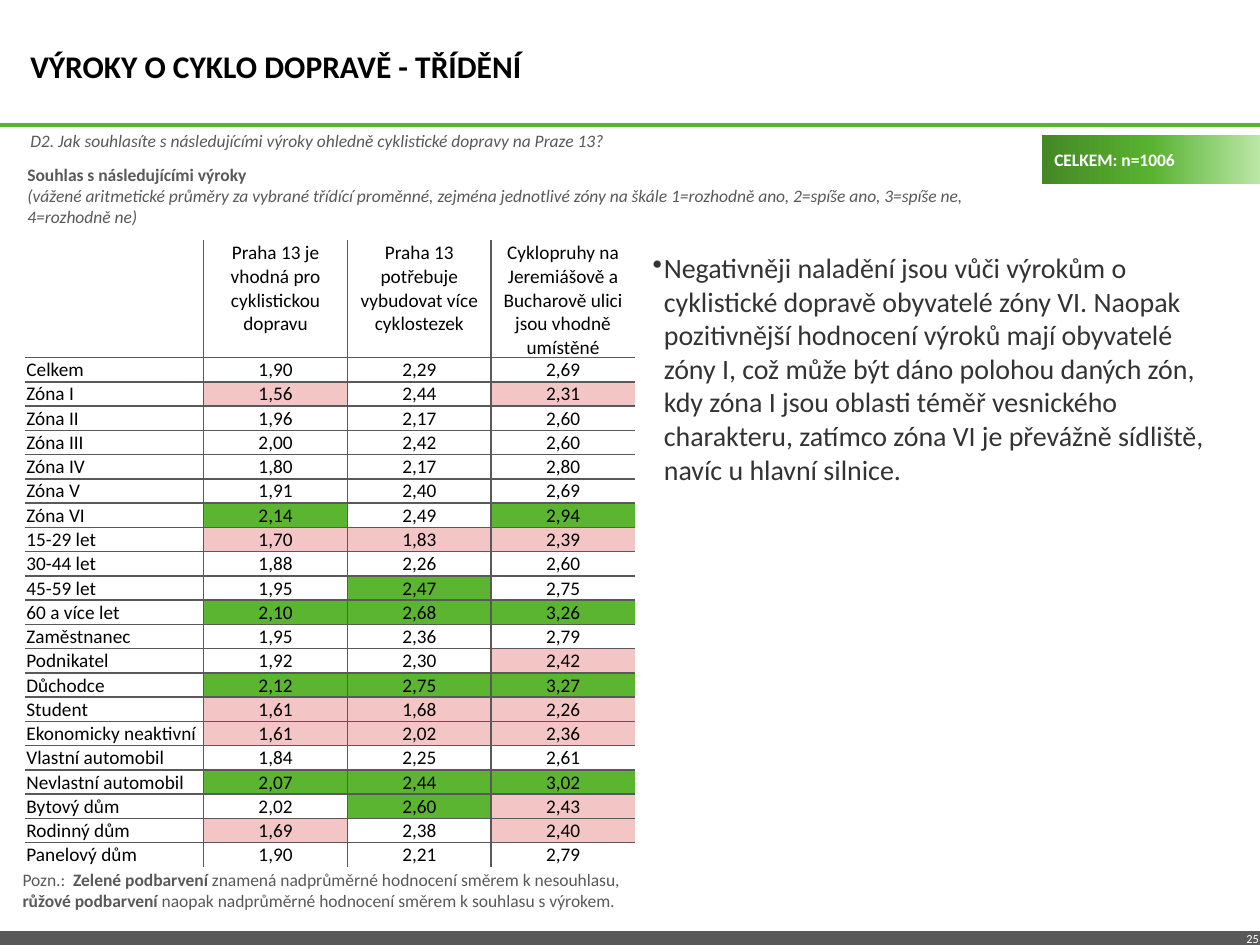
from copy import deepcopy

from lxml import etree
from pptx import Presentation
from pptx.dml.color import RGBColor
from pptx.enum.shapes import MSO_CONNECTOR, MSO_SHAPE
from pptx.enum.text import MSO_ANCHOR, PP_ALIGN
from pptx.oxml.ns import qn
from pptx.util import Pt

STRAIGHT = MSO_CONNECTOR.STRAIGHT
RECTANGLE = MSO_SHAPE.RECTANGLE
TOP, MIDDLE = MSO_ANCHOR.TOP, MSO_ANCHOR.MIDDLE
LEFT, CENTER, RIGHT = PP_ALIGN.LEFT, PP_ALIGN.CENTER, PP_ALIGN.RIGHT

FONT = "Calibri"
GREEN, PINK, GRAY = "5BB531", "F3C6C5", "595959"
BLACK, WHITE, DARK = "000000", "FFFFFF", "333333"
NO_TABLE_STYLE = "{2D5ABB26-0587-4C30-8999-92F81FD0307C}"
DEFAULT_INSETS = (7.2, 3.6, 7.2, 3.6)

STATEMENTS = [
    "Praha 13 je vhodná pro cyklistickou dopravu",
    "Praha 13 potřebuje vybudovat více cyklostezek",
    "Cyklopruhy na Jeremiášově a Bucharově ulici jsou vhodně umístěné",
]
# Group, mean scores, and one mark per score: g = green, p = pink, - = none
SCORES = [
    ("Celkem", "1,90 2,29 2,69", "---"),
    ("Zóna I", "1,56 2,44 2,31", "p-p"),
    ("Zóna II", "1,96 2,17 2,60", "---"),
    ("Zóna III", "2,00 2,42 2,60", "---"),
    ("Zóna IV", "1,80 2,17 2,80", "---"),
    ("Zóna V", "1,91 2,40 2,69", "---"),
    ("Zóna VI", "2,14 2,49 2,94", "g-g"),
    ("15-29 let", "1,70 1,83 2,39", "ppp"),
    ("30-44 let", "1,88 2,26 2,60", "---"),
    ("45-59 let", "1,95 2,47 2,75", "-g-"),
    ("60 a více let", "2,10 2,68 3,26", "ggg"),
    ("Zaměstnanec", "1,95 2,36 2,79", "---"),
    ("Podnikatel", "1,92 2,30 2,42", "--p"),
    ("Důchodce", "2,12 2,75 3,27", "ggg"),
    ("Student", "1,61 1,68 2,26", "ppp"),
    ("Ekonomicky neaktivní", "1,61 2,02 2,36", "ppp"),
    ("Vlastní automobil", "1,84 2,25 2,61", "---"),
    ("Nevlastní automobil", "2,07 2,44 3,02", "ggg"),
    ("Bytový dům", "2,02 2,60 2,43", "-gp"),
    ("Rodinný dům", "1,69 2,38 2,40", "p-p"),
    ("Panelový dům", "1,90 2,21 2,79", "---"),
]
MARK_FILLS = {"g": GREEN, "p": PINK}


def rgb(value):
    return RGBColor.from_string(value)


def add_run(paragraph, text, size, color, bold=False, italic=False):
    run = paragraph.add_run()
    run.text = text
    font = run.font
    font.name, font.size = FONT, Pt(size)
    font.bold, font.italic = bold, italic
    font.color.rgb = rgb(color)


def set_frame(frame, insets, anchor):
    frame.word_wrap = True
    frame.vertical_anchor = anchor
    (frame.margin_left, frame.margin_top,
     frame.margin_right, frame.margin_bottom) = map(Pt, insets)


def add_text(slide, box, paragraphs, size, color, insets=DEFAULT_INSETS,
             anchor=TOP, align=LEFT):
    """Each paragraph is a list of (text, style) runs; style holds b and i."""
    frame = slide.shapes.add_textbox(*map(Pt, box)).text_frame
    set_frame(frame, insets, anchor)
    for index, runs in enumerate(paragraphs):
        paragraph = frame.add_paragraph() if index else frame.paragraphs[0]
        paragraph.alignment = align
        for text, style in runs:
            add_run(paragraph, text, size, color, "b" in style, "i" in style)
    return frame


def add_rule(slide, left, right, y, color, width):
    rule = slide.shapes.add_connector(STRAIGHT, Pt(left), Pt(y), Pt(right), Pt(y))
    rule.line.color.rgb = rgb(color)
    rule.line.width = Pt(width)
    etree.SubElement(rule._element.spPr, qn("a:effectLst"))


def add_header(slide, box):
    left, top, width, height = box
    add_rule(slide, 0, 720, 71.3, GREEN, 2)
    insets = (2.9, 0, 2.9, 0)
    add_text(slide, (left, top, width, height),
             [[("VÝROKY O CYKLO DOPRAVĚ - TŘÍDĚNÍ", "b")]],
             18, BLACK, insets, MIDDLE)
    add_text(slide, (left, 74.2, width, 12.2),
             [[("D2. Jak souhlasíte s následujícími výroky ohledně cyklistické "
                "dopravy na Praze 13?", "i")]], 10, GRAY, insets)


def add_footer(slide, box):
    left, top, width, height = box
    add_rule(slide, left, left + width, top + height / 2, GRAY, height)
    add_text(slide, (694.8, 532.1, 24.5, 5.8), [[("25", "")]], 7, WHITE,
             (0, 0, 0, 0), align=RIGHT)


def add_sample_badge(slide, box):
    badge = slide.shapes.add_shape(RECTANGLE, *map(Pt, box))
    badge.shadow.inherit = False
    badge.line.fill.background()
    badge.fill.gradient()
    badge.fill.gradient_angle = 0
    stop_list = badge._element.spPr.find(".//" + qn("a:gsLst"))
    stop_list.append(deepcopy(stop_list[-1]))
    stops = zip(badge.fill.gradient_stops, (0, 0.5, 1),
                ("448825", "58B230", "BBE7A7"))
    for stop, position, color in stops:
        stop.position = position
        stop.color.rgb = rgb(color)
    set_frame(badge.text_frame, DEFAULT_INSETS, MIDDLE)
    sample = badge.text_frame.paragraphs[0]
    sample.alignment = LEFT
    add_run(sample, "CELKEM: n=1006", 10, WHITE, bold=True)


def set_border(cell, side):
    line = etree.SubElement(cell._tc.get_or_add_tcPr(), qn("a:ln" + side),
                            w=str(Pt(1)))
    fill = etree.SubElement(line, qn("a:solidFill"))
    etree.SubElement(fill, qn("a:srgbClr"), val=GRAY)


def add_score_table(slide, box):
    left, top, width, height = box
    label_width, header_height = 102, 66.9
    rows = [("", STATEMENTS, "---")]
    rows += [(group, scores.split(), marks) for group, scores, marks in SCORES]
    last_row, last_col = len(rows) - 1, len(STATEMENTS)

    table = slide.shapes.add_table(last_row + 1, last_col + 1,
                                   *map(Pt, box)).table
    table.first_row = table.horz_banding = False
    table._tbl.tblPr.find(qn("a:tableStyleId")).text = NO_TABLE_STYLE
    for c, column in enumerate(table.columns):
        column.width = Pt((width - label_width) / last_col if c else label_width)
    for r, row in enumerate(table.rows):
        row.height = Pt((height - header_height) / last_row if r else header_height)

    for r, (group, values, marks) in enumerate(rows):
        for c, (text, mark) in enumerate(zip([group, *values], "-" + marks)):
            cell = table.cell(r, c)
            cell.margin_left = cell.margin_right = Pt(0.7)
            cell.margin_top, cell.margin_bottom = Pt(0.4), Pt(0)
            cell.vertical_anchor = MIDDLE if r and c else TOP
            # Only inner grid lines are drawn
            inner = {"L": c > 0, "R": c < last_col, "T": r > 0, "B": r < last_row}
            for side in filter(inner.get, inner):
                set_border(cell, side)
            if mark in MARK_FILLS:
                cell.fill.solid()
                cell.fill.fore_color.rgb = rgb(MARK_FILLS[mark])
            else:
                cell.fill.background()
            paragraph = cell.text_frame.paragraphs[0]
            paragraph.alignment = CENTER if c else LEFT
            if text:
                add_run(paragraph, text, 11, BLACK)


def add_table_intro(slide, box):
    add_text(slide, box, [
        [("Souhlas s následujícími výroky", "b")],
        [("(vážené aritmetické průměry za vybrané třídící proměnné, zejména "
          "jednotlivé zóny na škále 1=rozhodně ano, 2=spíše ano, 3=spíše ne, "
          "4=rozhodně ne)", "i")],
    ], 10, GRAY)


def add_table_note(slide, box):
    add_text(slide, box, [[
        ("Pozn.:  ", ""),
        ("Zelené podbarvení ", "b"),
        ("znamená nadprůměrné hodnocení směrem k nesouhlasu, ", ""),
        ("růžové podbarvení ", "b"),
        ("naopak nadprůměrné hodnocení směrem k souhlasu s výrokem.", ""),
    ]], 10, GRAY)


def add_commentary(slide, box):
    frame = add_text(slide, box, [[
        ("Negativněji naladění jsou vůči výrokům o cyklistické dopravě obyvatelé "
         "zóny VI. Naopak pozitivnější hodnocení výroků mají obyvatelé zóny I, "
         "což může být dáno polohou daných zón, kdy zóna I jsou oblasti téměř "
         "vesnického charakteru, zatímco zóna VI je převážně sídliště, navíc u "
         "hlavní silnice.", "")]], 16, DARK)
    properties = frame.paragraphs[0]._p.get_or_add_pPr()
    properties.set("marL", str(Pt(6.5)))
    properties.set("indent", str(Pt(-6.5)))
    etree.SubElement(properties, qn("a:buChar"), char="•")


def main():
    deck = Presentation()
    deck.slide_width, deck.slide_height = Pt(720), Pt(540)
    slide = deck.slides.add_slide(deck.slide_layouts[6])
    add_header(slide, (14.4, 9.4, 578, 56.9))
    add_footer(slide, (0, 532, 720, 9))
    add_sample_badge(slide, (595.4, 77, 124.6, 28.1))
    add_commentary(slide, (365.8, 139.7, 340.6, 143.3))
    add_score_table(slide, (14.4, 137.4, 348.5, 358))
    add_table_intro(slide, (8.6, 90, 584, 43.9))
    add_table_note(slide, (5.8, 493.2, 382.3, 31.7))
    deck.save("out.pptx")


if __name__ == "__main__":
    main()
